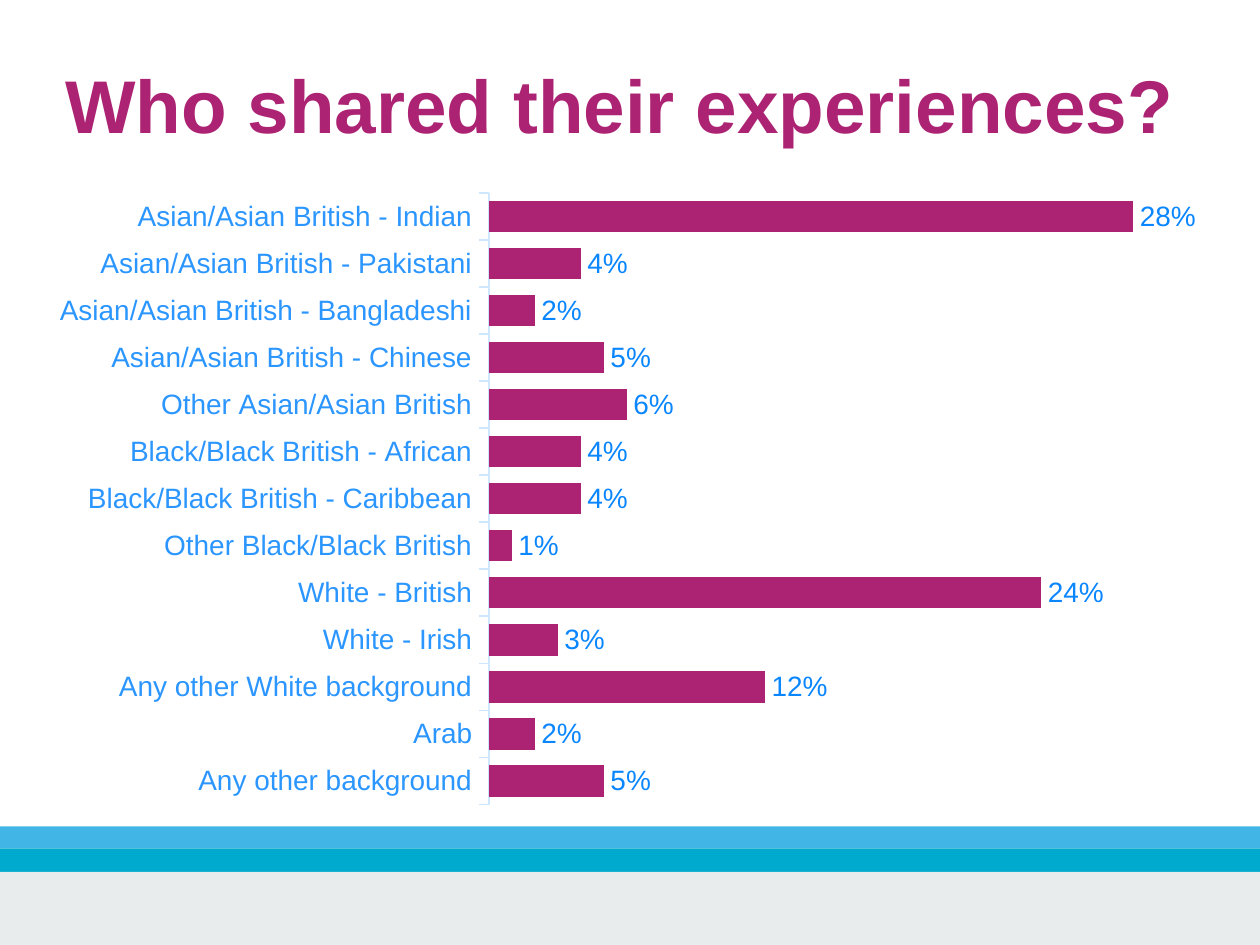
import pptx
import pptx.chart.data
import pptx.dml.color
import pptx.enum.chart
import pptx.enum.shapes
import pptx.enum.text
import pptx.util
import lxml.etree

W = 7.5
H = W * 3 / 4
MAGENTA, LABEL, VALUE, AXIS = "AD2373", "2B96FF", "0A86FF", "CEE7FF"
BANDS = [("41B6E6", 4.92, 5.05), ("00A9CE", 5.05, 5.19), ("E8ECED", 5.19, H)]
GROUPS = [
    ("Asian/Asian British - Indian", 28),
    ("Asian/Asian British - Pakistani", 4),
    ("Asian/Asian British - Bangladeshi", 2),
    ("Asian/Asian British - Chinese", 5),
    ("Other Asian/Asian British", 6),
    ("Black/Black British - African", 4),
    ("Black/Black British - Caribbean", 4),
    ("Other Black/Black British", 1),
    ("White - British", 24),
    ("White - Irish", 3),
    ("Any other White background", 12),
    ("Arab", 2),
    ("Any other background", 5),
]


def inches(*values):
    return [pptx.util.Inches(v) for v in values]


def rgb(value):
    return pptx.dml.color.RGBColor.from_string(value)


def set_attrs(obj, values):
    for name, value in values.items():
        setattr(obj, name, value)


def set_font(font, size, color, bold=False):
    set_attrs(font, {"name": "Arial", "size": pptx.util.Pt(size), "bold": bold})
    font.color.rgb = rgb(color)


def paint(sp, color):
    sp.fill.solid()
    sp.fill.fore_color.rgb = rgb(color)


def add_bands(slide, x, w):
    for color, top, bottom in BANDS:
        sp = slide.shapes.add_shape(
            pptx.enum.shapes.MSO_SHAPE.RECTANGLE, *inches(x, top, w, bottom - top))
        sp.shadow.inherit = False
        sp.line.fill.background()
        paint(sp, color)


def add_title(slide, x, y, w, h, text):
    tf = slide.shapes.add_textbox(*inches(x, y, w, h)).text_frame
    set_attrs(tf, {"word_wrap": True, "margin_left": pptx.util.Inches(0.01),
                   "margin_right": 0, "margin_top": pptx.util.Inches(0.02),
                   "margin_bottom": 0,
                   "vertical_anchor": pptx.enum.text.MSO_ANCHOR.TOP})
    r = tf.paragraphs[0].add_run()
    r.text = text
    set_font(r.font, 32, MAGENTA, True)


def place_plot(chart, x, y, w, h):
    ns = "http://schemas.openxmlformats.org/drawingml/2006/chart"
    area = chart._chartSpace.chart.plotArea
    for old in area.findall(f"{{{ns}}}layout"):
        area.remove(old)
    layout = lxml.etree.Element(f"{{{ns}}}layout")
    manual = lxml.etree.SubElement(layout, f"{{{ns}}}manualLayout")
    values = {"layoutTarget": "inner", "xMode": "edge", "yMode": "edge",
              "x": x, "y": y, "w": w, "h": h}
    for name, value in values.items():
        lxml.etree.SubElement(manual, f"{{{ns}}}{name}").set("val", str(value))
    area.insert(0, layout)


def add_bar_chart(slide, x, y, w, h):
    enum = pptx.enum.chart
    data = pptx.chart.data.CategoryChartData(number_format='0"%"')
    data.categories = [name for name, _ in GROUPS]
    data.add_series("Respondents", [value for _, value in GROUPS])
    chart = slide.shapes.add_chart(
        enum.XL_CHART_TYPE.BAR_CLUSTERED, *inches(x, y, w, h), data).chart
    set_attrs(chart, {"has_legend": False, "has_title": False})
    set_font(chart.font, 12, LABEL)

    plot = chart.plots[0]
    set_attrs(plot, {"gap_width": 50, "vary_by_categories": False, "has_data_labels": True})
    paint(plot.series[0].format, MAGENTA)
    set_attrs(plot.data_labels, {
        "show_value": True, "number_format": '0"%"', "number_format_is_linked": False,
        "position": enum.XL_LABEL_POSITION.OUTSIDE_END})
    set_font(plot.data_labels.font, 12, VALUE)

    axis = chart.category_axis
    set_attrs(axis, {"reverse_order": True, "has_major_gridlines": False,
                     "major_tick_mark": enum.XL_TICK_MARK.OUTSIDE})
    set_attrs(axis.format.line, {"width": pptx.util.Pt(0.75)})
    axis.format.line.color.rgb = rgb(AXIS)
    set_font(axis.tick_labels.font, 12, LABEL)
    set_attrs(chart.value_axis, {"minimum_scale": 0, "maximum_scale": 30,
                                 "has_major_gridlines": False, "visible": False})
    place_plot(chart, (2.91 - x) / w, (1.15 - y) / h, 4.11 / w, 3.64 / h)


def main():
    prs = pptx.Presentation()
    prs.slide_width, prs.slide_height = inches(W, H)
    slide = prs.slides.add_slide(prs.slide_layouts[6])
    add_bands(slide, 0, W)
    add_title(slide, 0.38, 0.33, 6.9, 0.56, "Who shared their experiences?")
    add_bar_chart(slide, 0.1, 1.05, 7.3, 3.85)
    prs.save("out.pptx")


if __name__ == "__main__":
    main()
